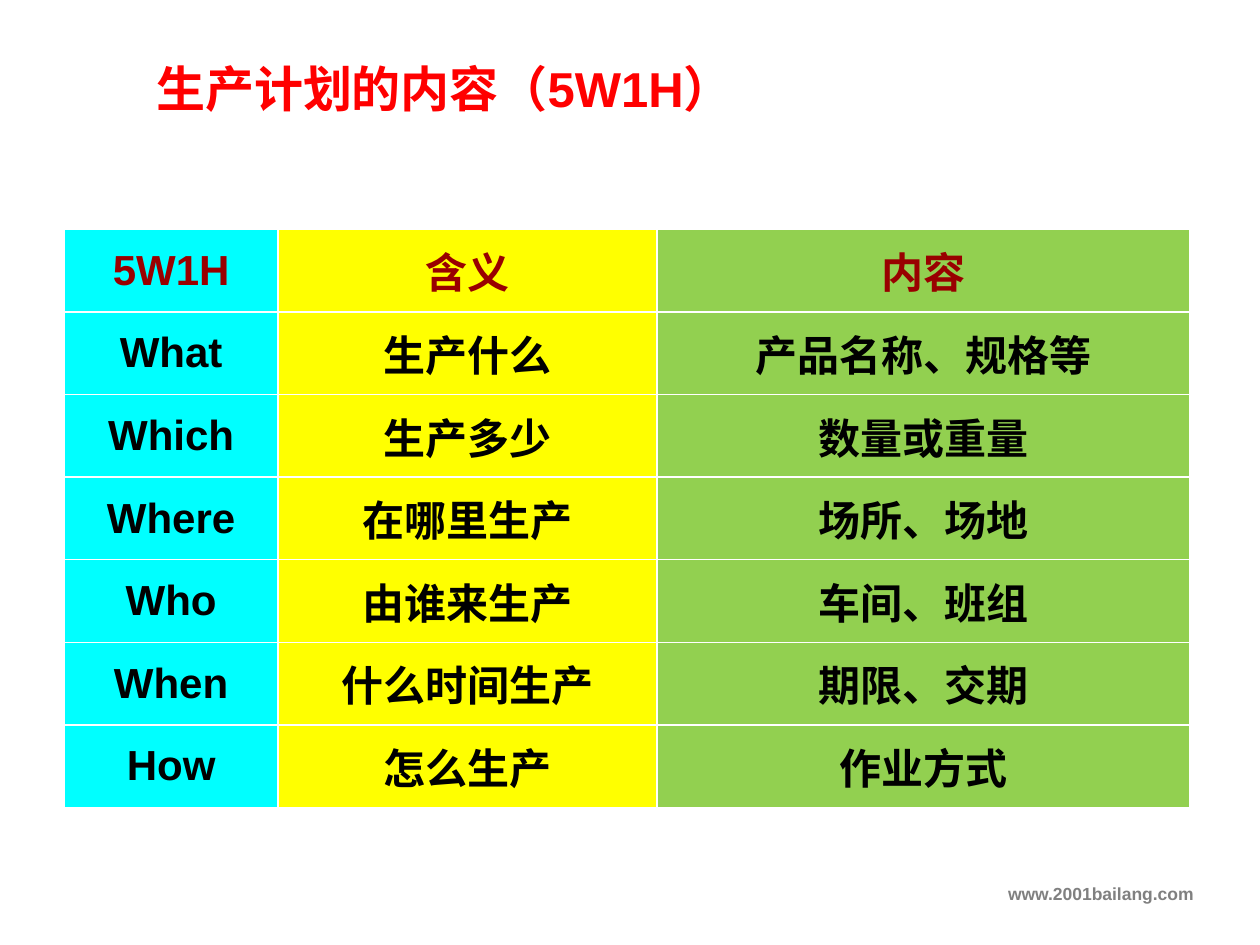
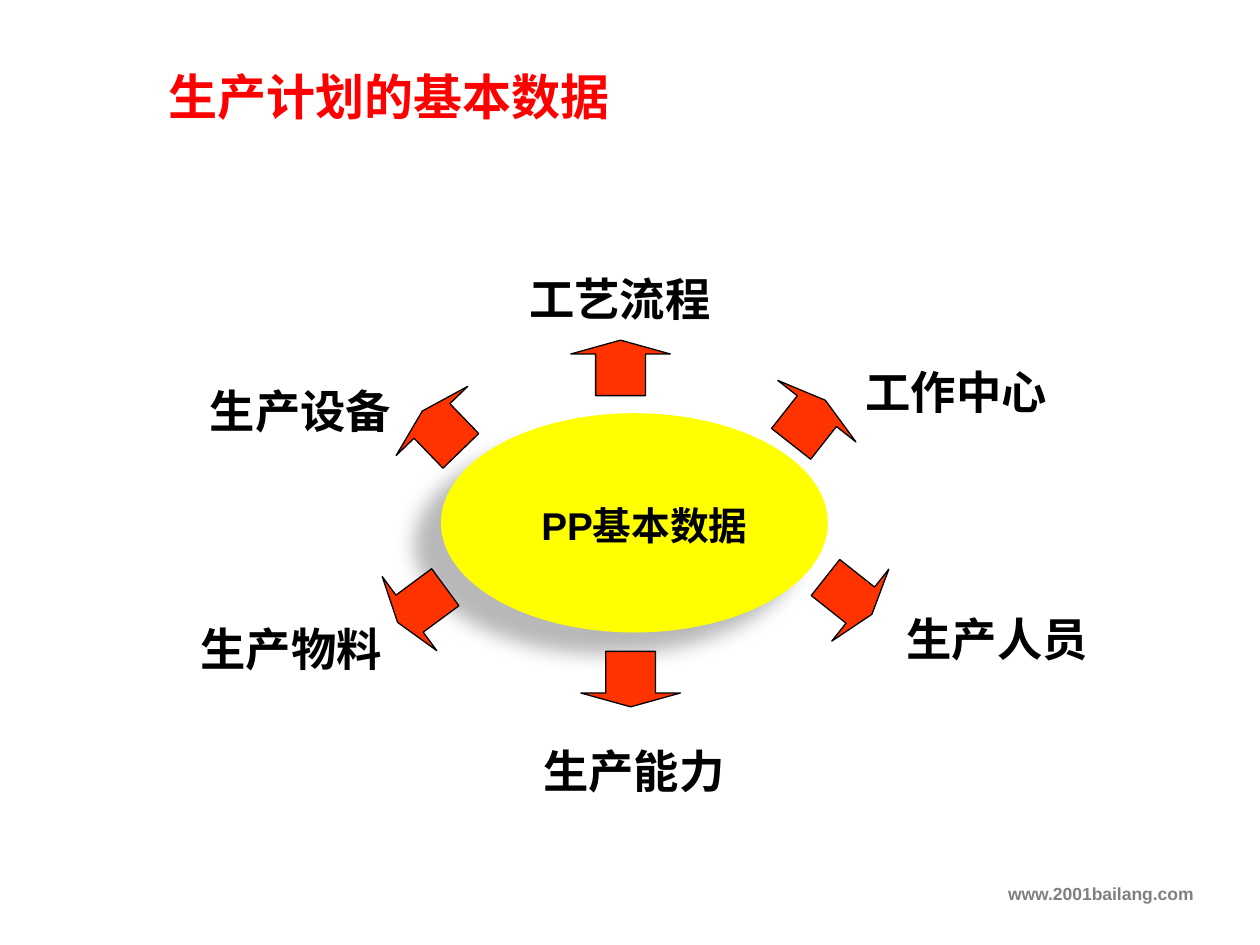
from lxml.etree import SubElement
from pptx import Presentation
from pptx.dml.color import RGBColor
from pptx.enum.shapes import MSO_SHAPE as SHAPE
from pptx.enum.text import MSO_ANCHOR as ANCHOR, MSO_AUTO_SIZE as AUTOSIZE, PP_ALIGN as ALIGN
from pptx.oxml.ns import qn
from pptx.util import Inches, Pt

COLS, ROWS = 100, 75
FONT = "Arial"
RED, BLACK, GREY, DARK_RED = "FF0000", "000000", "808080", "990000"
YELLOW, ORANGE = "FFFF00", "FF3300"
COLUMN_FILLS = ("00FFFF", YELLOW, "92D050")
COLUMN_SHARES = (0.19, 0.337, 0.473)

PLAN_ROWS = [
    ("5W1H", "含义", "内容"),
    ("What", "生产什么", "产品名称、规格等"),
    ("Which", "生产多少", "数量或重量"),
    ("Where", "在哪里生产", "场所、场地"),
    ("Who", "由谁来生产", "车间、班组"),
    ("When", "什么时间生产", "期限、交期"),
    ("How", "怎么生产", "作业方式"),
]

ARROW, LOW_ARROW = (7.9, 4.4), (7.3, 4.7)
SPOKES = [
    ("工艺流程", (-1.15, -17.8), (-1.1, -12.3), ARROW, 0),
    ("工作中心", (25.55, -10.4), (13.8, -8), ARROW, 38.2),
    ("生产设备", (-26.5, -8.9), (-15.3, -7.3), ARROW, 316),
    ("生产物料", (-27.25, 10), (-16.9, 6.5), LOW_ARROW, 233.6),
    ("生产能力", (-0.05, 19.7), (-0.3, 12.4), ARROW, 180),
    ("生产人员", (28.8, 9.2), (17, 5.8), LOW_ARROW, 128.4),
]


def color(hex_text):
    """Turn a hex string into a colour."""
    return RGBColor.from_string(hex_text)


def grid(prs, box):
    """Turn a box in grid columns and rows into slide lengths."""
    x, y, w, h = box
    col, row = prs.slide_width / COLS, prs.slide_height / ROWS
    return int(x * col), int(y * row), int(w * col), int(h * row)


def around(centre, offset, size):
    """Return the box of a given size whose middle is offset from a centre."""
    (cx, cy), (dx, dy), (w, h) = centre, offset, size
    return cx + dx - w / 2, cy + dy - h / 2, w, h


def write(tf, text, size, hex_text, align=ALIGN.CENTER):
    """Write one bold paragraph into a text frame."""
    p = tf.paragraphs[0]
    p.text = text
    p.alignment = align
    p.font.name, p.font.size, p.font.bold = FONT, Pt(size), True
    p.font.color.rgb = color(hex_text)


def add_text(prs, s, box, text, size, hex_text, align=ALIGN.CENTER):
    """Add a wrapping text box."""
    tf = s.shapes.add_textbox(*grid(prs, box)).text_frame
    tf.word_wrap = True
    write(tf, text, size, hex_text, align)


def add_shape(prs, s, kind, box, fill):
    """Add a filled shape without line or shadow."""
    sp = s.shapes.add_shape(kind, *grid(prs, box))
    sp.shadow.inherit = False
    sp.fill.solid()
    sp.fill.fore_color.rgb = color(fill)
    sp.line.fill.background()
    return sp


def cast_shadow(sp, blur, distance, angle, opacity):
    """Give a shape a soft black outer shadow."""
    effects = sp._element.spPr.find(qn("a:effectLst"))
    shadow = SubElement(effects, qn("a:outerShdw"), blurRad=str(Pt(blur)), dist=str(Pt(distance)),
                        dir=str(angle * 60000), algn="ctr", rotWithShape="0")
    black = SubElement(shadow, qn("a:srgbClr"), val=BLACK)
    SubElement(black, qn("a:alpha"), val=str(opacity * 1000))


def new_slide(prs, title, title_box, anchor):
    """Add a slide with its red title and the web address at the foot."""
    s = prs.slides.add_slide(prs.slide_layouts[5])
    sp = s.shapes.title
    sp.left, sp.top, sp.width, sp.height = grid(prs, title_box)
    tf = sp.text_frame
    tf.auto_size, tf.vertical_anchor = AUTOSIZE.NONE, anchor
    write(tf, title, 28, RED, ALIGN.LEFT)
    add_text(prs, s, (0, 69.6, 95.7, 3.5), "www.2001bailang.com", 10, GREY, ALIGN.RIGHT)
    return s


def add_plan_table(prs, s, box):
    """Fill a box with the 5W1H table."""
    x, y, w, h = grid(prs, box)
    table = s.shapes.add_table(len(PLAN_ROWS), len(COLUMN_SHARES), x, y, w, h).table
    for column, share in zip(table.columns, COLUMN_SHARES):
        column.width = int(w * share)
    for i, texts in enumerate(PLAN_ROWS):
        for j, text in enumerate(texts):
            cell = table.cell(i, j)
            cell.fill.solid()
            cell.fill.fore_color.rgb = color(COLUMN_FILLS[j])
            cell.vertical_anchor = ANCHOR.MIDDLE
            write(cell.text_frame, text, 24, BLACK if i else DARK_RED)


def add_data_diagram(prs, s, box):
    """Draw the hub in the middle of a box, with arrows out to its labels."""
    x, y, w, h = box
    centre = x + w / 2, y + h / 2
    hub = add_shape(prs, s, SHAPE.OVAL, around(centre, (0, 0), (30.7, 17.4)), YELLOW)
    cast_shadow(hub, blur=11.8, distance=19.7, angle=141, opacity=28)
    add_text(prs, s, around(centre, (0.8, 0.15), (21.3, 4.7)), "PP基本数据", 22.1, BLACK)
    for label, label_offset, arrow_offset, arrow_size, angle in SPOKES:
        arrow = add_shape(prs, s, SHAPE.UP_ARROW, around(centre, arrow_offset, arrow_size), ORANGE)
        arrow.adjustments[1] = 0.25
        arrow.rotation = angle
        arrow.line.color.rgb = color(BLACK)
        arrow.line.width = Pt(0.75)
        add_text(prs, s, around(centre, label_offset, (17.2, 5.4)), label, 25.9, BLACK)


def main():
    """Build both slides and save them."""
    prs = Presentation()
    prs.slide_width, prs.slide_height = Inches(10), Inches(7.5)
    s = new_slide(prs, "生产计划的内容（5W1H）", (11.4, 3.6, 79.1, 6.7), ANCHOR.MIDDLE)
    add_plan_table(prs, s, (5.1, 18.2, 89.3, 45.9))
    s = new_slide(prs, "生产计划的基本数据", (12.4, 4.8, 59.2, 5.8), ANCHOR.TOP)
    add_data_diagram(prs, s, (13, 20, 74.7, 43))
    prs.save("out.pptx")


if __name__ == "__main__":
    main()
